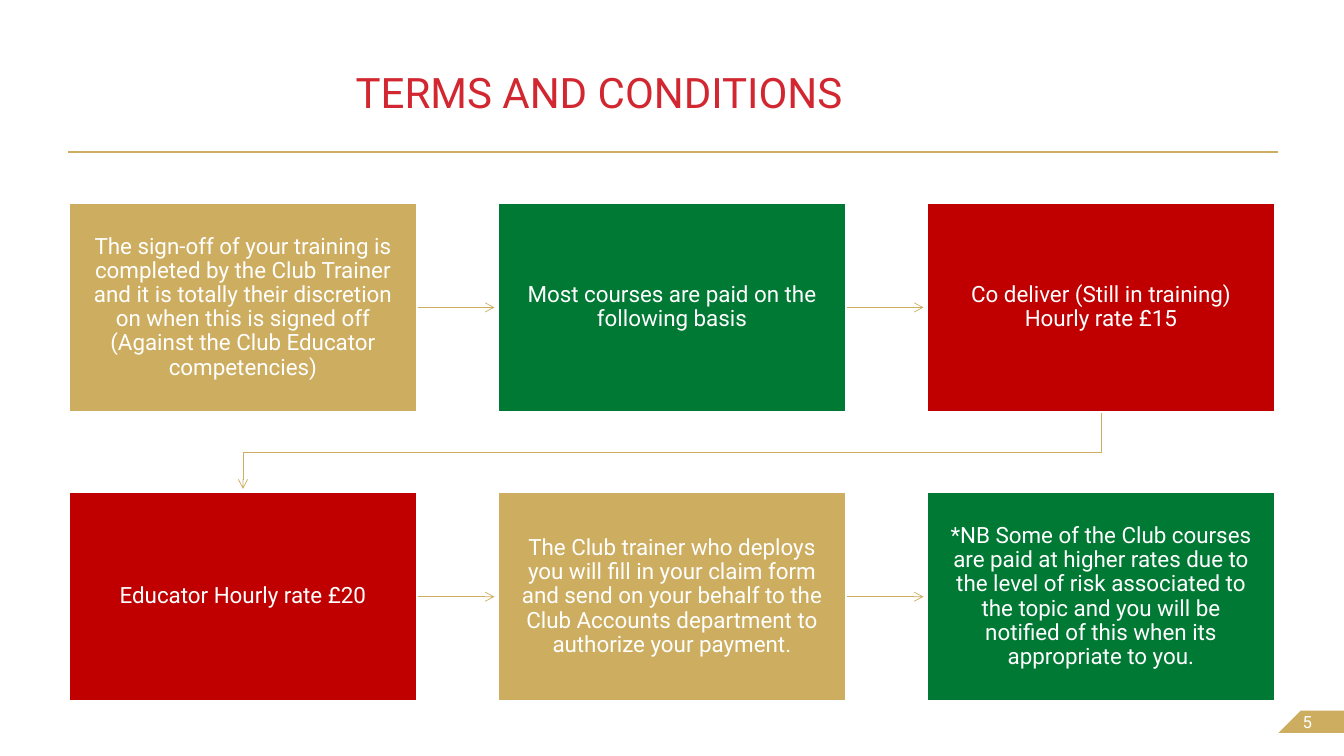
from dataclasses import dataclass

from lxml import etree
from pptx import Presentation
from pptx.dml.color import RGBColor
from pptx.enum import shapes, text
from pptx.oxml.ns import qn
from pptx.util import Inches, Pt


@dataclass(frozen=True)
class Theme:
    font: str = "Roboto"
    gold: str = "CDAD5F"
    green: str = "007934"
    red: str = "C00000"
    title_red: str = "D22730"
    white: str = "FFFFFF"
    title_size: float = 30
    step_size: float = 16
    number_size: float = 12


THEME = Theme()
TITLE = "TERMS AND CONDITIONS "
PAGE_NUMBER = "5"
STEPS = [
    ("The sign-off of your training is completed by the Club Trainer and it is "
     "totally their discretion on when this is signed off (Against the Club "
     "Educator competencies)", THEME.gold),
    ("Most courses are paid on the following basis", THEME.green),
    ("Co deliver (Still in training) Hourly rate £15", THEME.red),
    ("Educator Hourly rate £20", THEME.red),
    ("The Club trainer who deploys you will fill in your claim form and send on "
     "your behalf to the Club Accounts department to authorize your payment.",
     THEME.gold),
    ("*NB Some of the Club courses are paid at higher rates due to the level of "
     "risk associated to the topic and you will be notified of this when its "
     "appropriate to you.", THEME.green),
]

# Step grid, in inches
COLUMNS = 3
LEFT, LAST_LEFT, TOP = 0.68, 9.19, 2.01
STEP_WIDTH, STEP_HEIGHT = 3.46, 2.08
COLUMN_PITCH = (LAST_LEFT - LEFT) / (COLUMNS - 1)
ROW_PITCH = 2.87
ARROW_GAP = 0.03
TURN_DROP = 0.4


def rgb(colour):
    return RGBColor.from_string(colour)


def write(shape, words, size, colour, align, spacing, insets, anchor):
    frame = shape.text_frame
    frame.word_wrap = True
    frame.auto_size = text.MSO_AUTO_SIZE.NONE
    frame.vertical_anchor = anchor
    (frame.margin_left, frame.margin_top,
     frame.margin_right, frame.margin_bottom) = map(Inches, insets)
    para = frame.paragraphs[0]
    para.alignment = align
    para.line_spacing = spacing
    span = para.add_run()
    span.text = words
    span.font.name = THEME.font
    span.font.size = Pt(size)
    span.font.color.rgb = rgb(colour)


def style_line(line_shape, width, arrow=False):
    line_shape.line.color.rgb = rgb(THEME.gold)
    line_shape.line.width = Pt(width)
    if arrow:
        outline = line_shape.line._get_or_add_ln()
        etree.SubElement(outline, qn("a:tailEnd"), type="arrow")


def add_line(slide, start, end, width, arrow=False):
    line = slide.shapes.add_connector(
        shapes.MSO_CONNECTOR.STRAIGHT, *map(Inches, start + end))
    style_line(line, width, arrow)
    etree.SubElement(line._element.spPr, qn("a:effectLst"))


def add_outline(slide, points, close):
    corners = [(Inches(x), Inches(y)) for x, y in points]
    builder = slide.shapes.build_freeform(*corners[0])
    builder.add_line_segments(corners[1:], close=close)
    outline = builder.convert_to_shape()
    outline.shadow.inherit = False
    return outline


def step_origin(index):
    row, column = divmod(index, COLUMNS)
    return LEFT + column * COLUMN_PITCH, TOP + row * ROW_PITCH


def add_step(slide, index, words, colour):
    x, y = step_origin(index)
    box = slide.shapes.add_shape(
        shapes.MSO_SHAPE.RECTANGLE, Inches(x), Inches(y),
        Inches(STEP_WIDTH), Inches(STEP_HEIGHT))
    box.shadow.inherit = False
    box.fill.solid()
    box.fill.fore_color.rgb = rgb(colour)
    box.line.color.rgb = rgb(THEME.white)
    box.line.width = Pt(1.5)
    write(box, words, THEME.step_size, THEME.white, text.PP_ALIGN.CENTER, 0.9,
          (0.17, 0.18, 0.17, 0.18), text.MSO_ANCHOR.MIDDLE)


def add_arrow(slide, index):
    """Join a step to the next one, turning down at the end of a row."""
    x, y = step_origin(index)
    next_x, next_y = step_origin(index + 1)
    if y == next_y:
        middle = y + STEP_HEIGHT / 2
        add_line(slide, (x + STEP_WIDTH, middle), (next_x - ARROW_GAP, middle),
                 0.5, arrow=True)
        return
    start_x, end_x = x + STEP_WIDTH / 2, next_x + STEP_WIDTH / 2
    bottom = y + STEP_HEIGHT
    turn = add_outline(slide, [
        (start_x, bottom), (start_x, bottom + TURN_DROP),
        (end_x, bottom + TURN_DROP), (end_x, next_y - ARROW_GAP)], close=False)
    turn.fill.background()
    style_line(turn, 0.5, arrow=True)


def add_page_tab(slide):
    tab = add_outline(
        slide, [(12.9, 7.05), (13.33, 7.05), (13.33, 7.27), (12.68, 7.27)],
        close=True)
    tab.fill.solid()
    tab.fill.fore_color.rgb = rgb(THEME.gold)
    tab.line.fill.background()
    write(tab, PAGE_NUMBER, THEME.number_size, THEME.white, text.PP_ALIGN.LEFT,
          1.0, (0.24, 0, 0, 0), text.MSO_ANCHOR.MIDDLE)


def main():
    deck = Presentation()
    deck.slide_width, deck.slide_height = Inches(13.33), Inches(7.5)
    slide = deck.slides.add_slide(deck.slide_layouts[5])

    title = slide.shapes.title
    title.left, title.top = Inches(0.67), Inches(0.29)
    title.width, title.height = Inches(10.65), Inches(0.87)
    write(title, TITLE, THEME.title_size, THEME.title_red, text.PP_ALIGN.CENTER,
          0.8, (0, 0, 0, 0), text.MSO_ANCHOR.BOTTOM)
    add_line(slide, (0.67, 1.51), (12.68, 1.51), 1)
    add_page_tab(slide)

    for index in range(len(STEPS) - 1):
        add_arrow(slide, index)
    for index, (words, colour) in enumerate(STEPS):
        add_step(slide, index, words, colour)

    deck.save("out.pptx")


if __name__ == "__main__":
    main()
